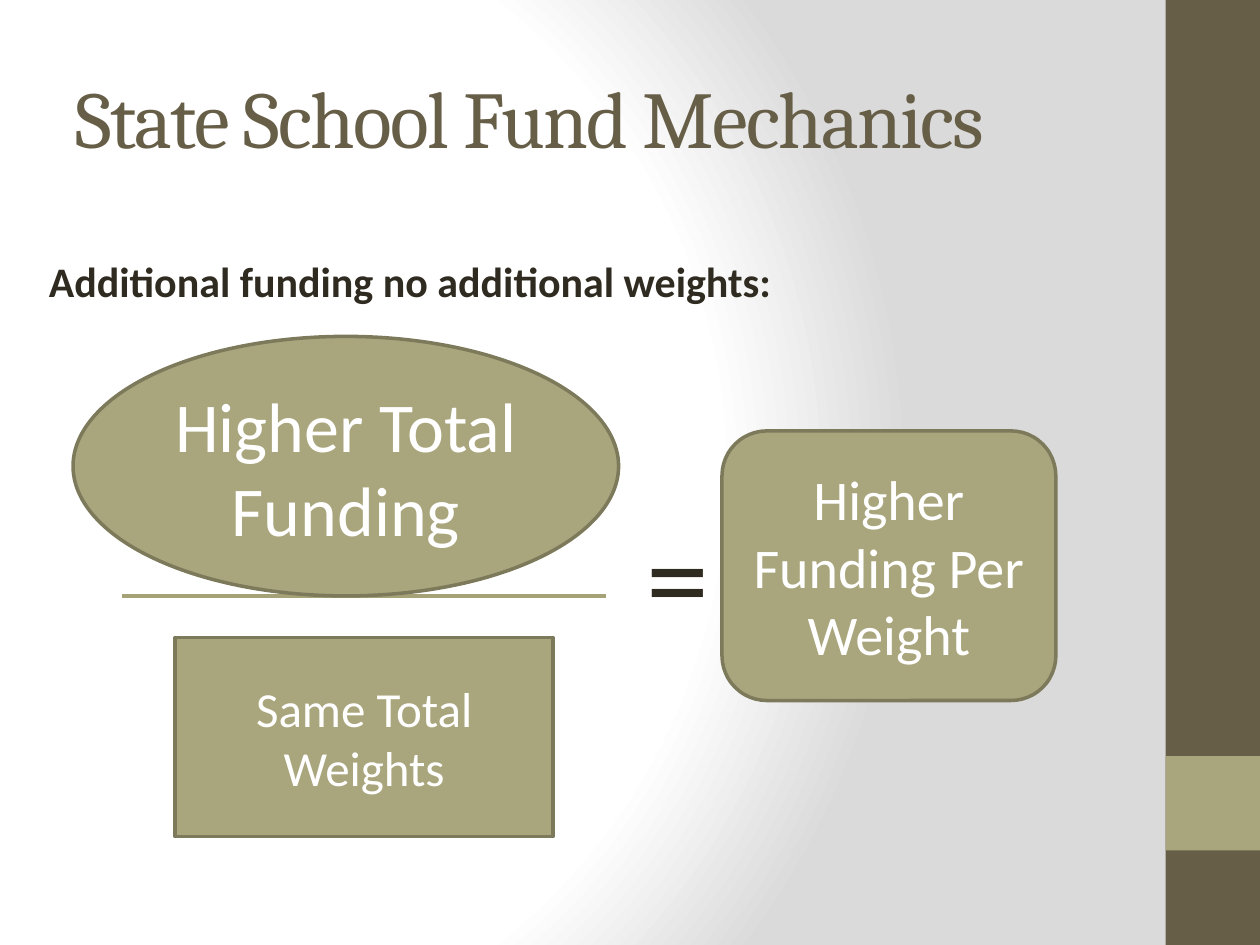
from lxml import etree
from pptx import Presentation
from pptx.dml.color import RGBColor
from pptx.enum.shapes import MSO_CONNECTOR, MSO_SHAPE
from pptx.enum.text import MSO_ANCHOR, PP_ALIGN
from pptx.oxml import parse_xml
from pptx.oxml.ns import nsdecls, qn
from pptx.util import Inches, Pt

BROWN = RGBColor(0x67, 0x5E, 0x47)
OLIVE = RGBColor(0xA9, 0xA5, 0x7C)
OUTLINE = RGBColor(0x7D, 0x7A, 0x5C)
RULE = RGBColor(0xA6, 0xA2, 0x78)
DARK = RGBColor(0x2F, 0x2B, 0x20)
WHITE = RGBColor(0xFF, 0xFF, 0xFF)
GREY = RGBColor(0xDA, 0xDA, 0xDA)


def write_text(shape, text, size, color, font="Calibri", bold=False, spacing=None,
               align=PP_ALIGN.LEFT, anchor=MSO_ANCHOR.TOP, wrap=True):
    """Put one formatted paragraph into a shape."""
    frame = shape.text_frame
    frame.word_wrap = wrap
    frame.vertical_anchor = anchor
    paragraph = frame.paragraphs[0]
    paragraph.alignment = align
    run = paragraph.add_run()
    run.text = text
    run.font.size = Pt(size)
    run.font.name = font
    run.font.bold = bold
    run.font.color.rgb = color
    if spacing is not None:
        run.font._element.set("spc", str(spacing * 100))


def add_label(slide, box, text, size, color=DARK, **text_format):
    """Add a text box."""
    label = slide.shapes.add_textbox(*map(Inches, box))
    write_text(label, text, size, color, **text_format)


def add_block(slide, kind, box, fill, outline=None):
    """Add a filled shape without shadow."""
    block = slide.shapes.add_shape(kind, *map(Inches, box))
    block.shadow.inherit = False
    block.fill.solid()
    block.fill.fore_color.rgb = fill
    if outline is None:
        block.line.fill.background()
    else:
        block.line.color.rgb = outline
        block.line.width = Pt(2)
    return block


def add_term(slide, kind, box, text, size):
    """Add one outlined term of the equation."""
    term = add_block(slide, kind, box, OLIVE, OUTLINE)
    write_text(term, text, size, WHITE, align=PP_ALIGN.CENTER, anchor=MSO_ANCHOR.MIDDLE)


def add_fraction_bar(slide, left, top, width):
    """Draw the rule between numerator and denominator."""
    bar = slide.shapes.add_connector(
        MSO_CONNECTOR.STRAIGHT, Inches(left), Inches(top), Inches(left + width), Inches(top))
    bar.line.color.rgb = RULE
    bar.line.width = Pt(2.5)
    etree.SubElement(bar._element.spPr, qn("a:effectLst"))


def paint_background(slide):
    """Fill the background with a circular gradient."""
    fill = slide.background.fill
    fill.solid()
    solid = slide._element.find(".//" + qn("p:bgPr")).find(qn("a:solidFill"))
    stops = "".join(
        f'<a:gs pos="{position * 1000}"><a:srgbClr val="{color}"/></a:gs>'
        for position, color in ((0, WHITE), (75, WHITE), (100, GREY)))
    gradient = parse_xml(
        f'<a:gradFill {nsdecls("a")} rotWithShape="1"><a:gsLst>{stops}</a:gsLst>'
        '<a:path path="circle"><a:fillToRect l="20000" t="50000" r="100000" b="50000"/>'
        '</a:path></a:gradFill>')
    solid.getparent().replace(solid, gradient)


def add_side_band(slide, left, top, width, height):
    """Draw the side band with its square accent."""
    add_block(slide, MSO_SHAPE.RECTANGLE, (left, top, width, height), BROWN)
    accent_top = top + height - 2 * width
    add_block(slide, MSO_SHAPE.RECTANGLE, (left, accent_top, width, width), OLIVE)


def add_equation(slide, left, top):
    """Draw the funding fraction and its result."""
    add_fraction_bar(slide, left + 0.39, top + 2.06, 3.84)
    add_term(slide, MSO_SHAPE.OVAL, (left, top, 4.33, 2.06), "Higher Total Funding", 40)
    add_label(slide, (left + 4.45, top + 1.23, 0.71, 1.31), "=", 72, wrap=False)
    add_term(slide, MSO_SHAPE.ROUNDED_RECTANGLE, (left + 5.15, top + 0.75, 2.65, 2.14),
             "Higher Funding Per Weight", 32)
    add_term(slide, MSO_SHAPE.RECTANGLE, (left + 0.81, top + 2.39, 3, 1.58),
             "Same Total Weights", 28)


def main():
    """Build and save the slide."""
    presentation = Presentation()
    presentation.slide_width = Inches(10)
    presentation.slide_height = Inches(7.5)
    slide = presentation.slides.add_slide(presentation.slide_layouts[6])
    paint_background(slide)
    add_side_band(slide, 9.25, 0, 0.75, 7.5)
    add_label(slide, (0.5, 0.3, 8.33, 1.25), "State School Fund Mechanics", 46, BROWN,
              font="Cambria", spacing=-1, anchor=MSO_ANCHOR.MIDDLE)
    add_equation(slide, 0.58, 2.67)
    add_label(slide, (0.29, 1.98, 6, 0.5), "Additional funding no additional weights:", 24,
              bold=True, wrap=False)
    presentation.save("out.pptx")


if __name__ == "__main__":
    main()
